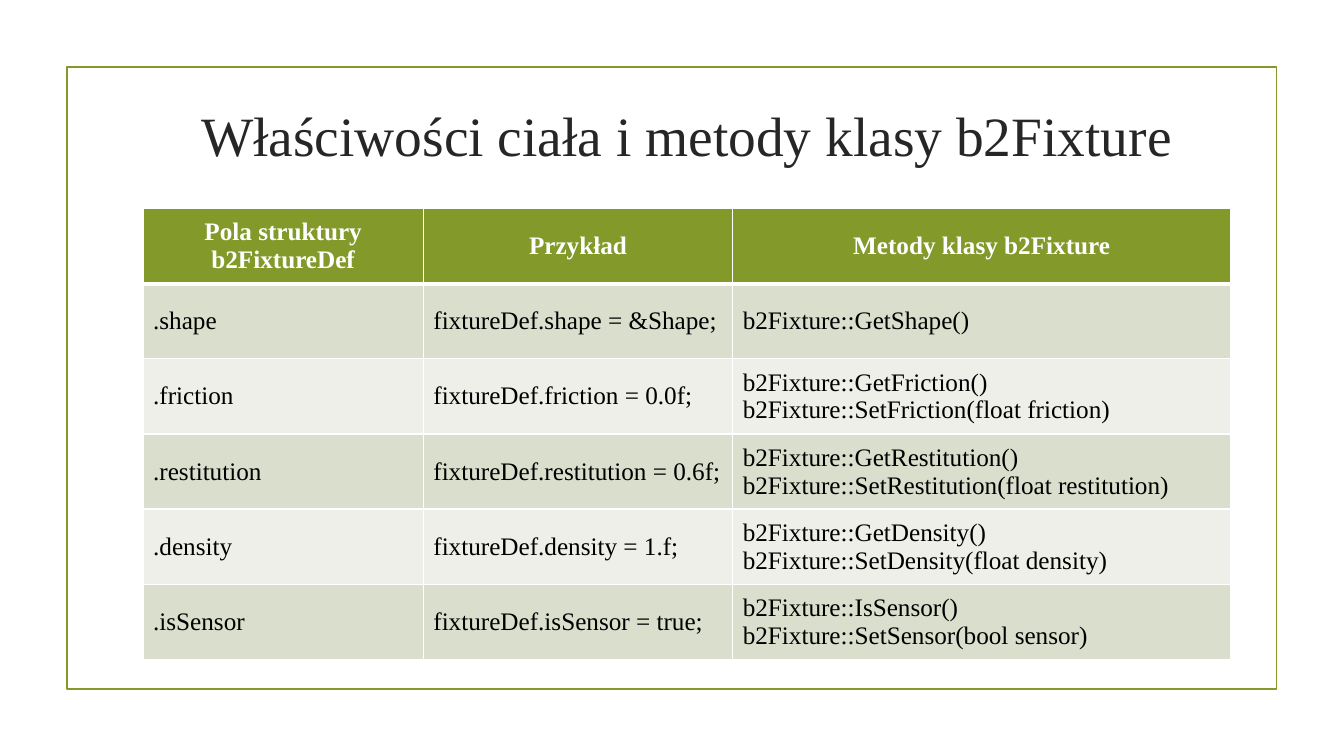
from lxml.etree import SubElement
from pptx import Presentation
from pptx.dml.color import RGBColor
from pptx.enum.shapes import MSO_SHAPE
from pptx.enum.text import MSO_ANCHOR, PP_ALIGN
from pptx.oxml.ns import qn
from pptx.util import Pt

FONT = "Times New Roman"
COLORS = {
    "green": "83992A",
    "title": "262626",
    "text": "000000",
    "white": "FFFFFF",
    "odd": "D9DECD",
    "even": "EDEFE8",
}
COLUMN_WIDTHS = [200.2, 221, 355.7]
HEADER = ["Pola struktury b2FixtureDef", "Przykład", "Metody klasy b2Fixture"]
PROPERTIES = [
    [".shape", "fixtureDef.shape = &Shape;", "b2Fixture::GetShape()"],
    [".friction", "fixtureDef.friction = 0.0f;",
     "b2Fixture::GetFriction()\nb2Fixture::SetFriction(float friction)"],
    [".restitution", "fixtureDef.restitution = 0.6f;",
     "b2Fixture::GetRestitution()\nb2Fixture::SetRestitution(float restitution)"],
    [".density", "fixtureDef.density = 1.f;",
     "b2Fixture::GetDensity()\nb2Fixture::SetDensity(float density)"],
    [".isSensor", "fixtureDef.isSensor = true;",
     "b2Fixture::IsSensor()\nb2Fixture::SetSensor(bool sensor)"],
]


def rgb(name):
    return RGBColor.from_string(COLORS[name])


def write(tf, text, size, color, align, bold=False):
    """Put each line of text in its own paragraph."""
    for i, line in enumerate(text.split("\n")):
        p = tf.add_paragraph() if i else tf.paragraphs[0]
        p.alignment = align
        r = p.add_run()
        r.text = line
        r.font.name = FONT
        r.font.size = Pt(size)
        r.font.bold = bold
        r.font.color.rgb = rgb(color)


def add_frame(slide, x, y, w, h):
    sp = slide.shapes.add_shape(MSO_SHAPE.RECTANGLE, Pt(x), Pt(y), Pt(w), Pt(h))
    sp.shadow.inherit = False
    sp.fill.background()
    sp.line.color.rgb = rgb("green")
    sp.line.width = Pt(1.25)


def add_title(slide, text, x, y, w, h):
    tf = slide.shapes.add_textbox(Pt(x), Pt(y), Pt(w), Pt(h)).text_frame
    tf.word_wrap = True
    tf.vertical_anchor = MSO_ANCHOR.MIDDLE
    write(tf, text, 39.6, "title", PP_ALIGN.CENTER)


def set_borders(cell, top, bottom):
    """Draw white borders; top and bottom are widths in points."""
    tcPr = cell._tc.get_or_add_tcPr()
    for side, width in zip("LRTB", (1, 1, top, bottom)):
        ln = SubElement(tcPr, qn(f"a:ln{side}"), w=str(Pt(width)))
        fill = SubElement(ln, qn("a:solidFill"))
        SubElement(fill, qn("a:srgbClr"), val=COLORS["white"])


def add_property_table(slide, x, y, w, h):
    rows = [HEADER] + PROPERTIES
    table = slide.shapes.add_table(
        len(rows), len(HEADER), Pt(x), Pt(y), Pt(w), Pt(h)).table
    for column, width in zip(table.columns, COLUMN_WIDTHS):
        column.width = Pt(width)
    for i, texts in enumerate(rows):
        table.rows[i].height = Pt(h / len(rows))
        header = i == 0
        for j, text in enumerate(texts):
            cell = table.cell(i, j)
            cell.vertical_anchor = MSO_ANCHOR.MIDDLE
            set_borders(cell, 3 if i == 1 else 1, 3 if header else 1)
            cell.fill.solid()
            cell.fill.fore_color.rgb = rgb(
                "green" if header else "odd" if i % 2 else "even")
            write(cell.text_frame, text, 18, "white" if header else "text",
                  PP_ALIGN.CENTER if header else PP_ALIGN.LEFT, header)


def main():
    prs = Presentation()
    prs.slide_width, prs.slide_height = Pt(960), Pt(540)
    slide = prs.slides.add_slide(prs.slide_layouts[6])
    left, width = 102.2, sum(COLUMN_WIDTHS)
    add_frame(slide, 47.8, 48, 864, 444)
    add_title(slide, "Właściwości ciała i metody klasy b2Fixture",
              left, 71.3, width, 49.7)
    add_property_table(slide, left, 149, width, 322)
    prs.save("out.pptx")


if __name__ == "__main__":
    main()
